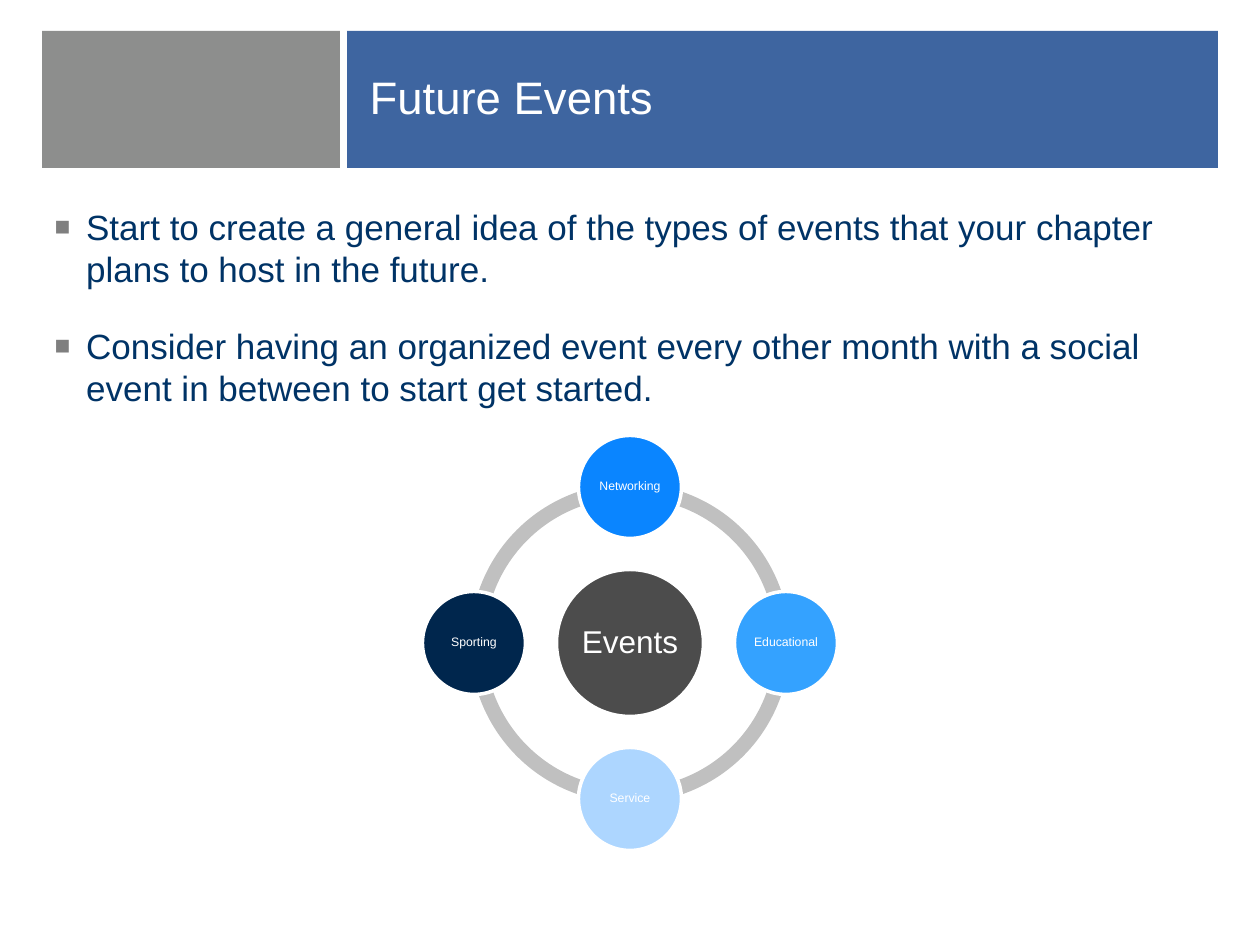
import math
from lxml import etree
from pptx import Presentation
from pptx.dml.color import RGBColor
from pptx.enum.shapes import MSO_SHAPE
from pptx.enum.text import MSO_ANCHOR, MSO_AUTO_SIZE, PP_ALIGN
from pptx.oxml.ns import qn
from pptx.util import Pt

RECTANGLE, OVAL, BLOCK_ARC = MSO_SHAPE.RECTANGLE, MSO_SHAPE.OVAL, MSO_SHAPE.BLOCK_ARC
MIDDLE = MSO_ANCHOR.MIDDLE
NO_AUTOFIT = MSO_AUTO_SIZE.NONE
LEFT, CENTER = PP_ALIGN.LEFT, PP_ALIGN.CENTER
EMU_PER_PX = 914400 / 126


def px(length):
    return round(length * EMU_PER_PX)


def color(hex_code):
    return RGBColor.from_string(hex_code)


class EventSlide:
    font_name = "Arial"
    white = "FFFFFF"
    navy = "003366"
    bullet_gray = "7F7F7F"
    ring_gray = "C0C0C0"

    def __init__(self, deck):
        self.slide = deck.slides.add_slide(deck.slide_layouts[1])
        self.heading = self.slide.shapes.title
        self.body = self.slide.placeholders[1]

    def set_font(self, paragraph, size, hex_code):
        paragraph.font.name = self.font_name
        paragraph.font.size = Pt(size)
        paragraph.font.color.rgb = color(hex_code)

    def place(self, placeholder, left, top, width, height):
        placeholder.left, placeholder.top = px(left), px(top)
        placeholder.width, placeholder.height = px(width), px(height)
        placeholder.text_frame.auto_size = NO_AUTOFIT

    def figure(self, preset, left, top, width, height, fill):
        shape = self.slide.shapes.add_shape(preset, px(left), px(top), px(width), px(height))
        shape.shadow.inherit = False
        shape.fill.solid()
        shape.fill.fore_color.rgb = color(fill)
        shape.line.fill.background()
        return shape

    def band(self, left, width, fill):
        block = self.figure(RECTANGLE, left, 31, width, 137, fill)
        self.heading.element.addprevious(block.element)

    def title(self, wording):
        self.place(self.heading, 357, 35, 840, 122)
        frame = self.heading.text_frame
        frame.vertical_anchor = MIDDLE
        frame.text = wording
        frame.paragraphs[0].alignment = LEFT
        self.set_font(frame.paragraphs[0], 26, self.white)

    def bullets(self, points):
        self.place(self.body, 42, 199, 1176, 693)
        frame = self.body.text_frame
        frame.text = "\n".join(points)
        for index, paragraph in enumerate(frame.paragraphs):
            paragraph.line_spacing = 1.0
            paragraph.space_before = Pt(20 if index else 0)
            self.mark(paragraph)
            self.set_font(paragraph, 20, self.navy)

    def mark(self, paragraph):
        properties = paragraph._p.get_or_add_pPr()
        properties.set("marL", "228600")
        properties.set("indent", "-228600")
        tint = etree.SubElement(properties, qn("a:buClr"))
        etree.SubElement(tint, qn("a:srgbClr"), val=self.bullet_gray)
        etree.SubElement(properties, qn("a:buSzPct"), val="75000")
        etree.SubElement(properties, qn("a:buFont"), typeface=self.font_name)
        etree.SubElement(properties, qn("a:buChar"), char="■")

    def ring(self, center_x, center_y, diameter):
        left, top = center_x - diameter / 2, center_y - diameter / 2
        for quarter in range(4):
            arc = self.figure(BLOCK_ARC, left, top, diameter, diameter, self.ring_gray)
            arc.adjustments[0] = quarter * 54
            arc.adjustments[1] = (quarter + 1) % 4 * 54
            arc.adjustments[2] = 0.046

    def circle(self, label, center_x, center_y, diameter, fill, size):
        disc = self.figure(OVAL, center_x - diameter / 2, center_y - diameter / 2,
                           diameter, diameter, fill)
        disc.line.color.rgb = color(self.white)
        disc.line.width = Pt(2)
        frame = disc.text_frame
        frame.word_wrap = False
        frame.vertical_anchor = MIDDLE
        frame.margin_left = frame.margin_right = px(1)
        frame.margin_top = frame.margin_bottom = px(1)
        frame.text = label
        paragraph = frame.paragraphs[0]
        paragraph.alignment = CENTER
        paragraph.line_spacing = 0.9
        self.set_font(paragraph, size, self.white)


def main():
    deck = Presentation()
    deck.slide_width, deck.slide_height = px(1260), px(945)
    page = EventSlide(deck)

    page.band(347, 871, "3E65A0")
    page.band(340, 7, "FFFFFE")
    page.band(42, 298, "8D8E8D")
    page.title("Future Events")
    page.bullets([
        "Start to create a general idea of the types of events that your chapter "
        "plans to host in the future.",
        "Consider having an organized event every other month with a social event "
        "in between to start get started.",
    ])

    hub_x, hub_y, orbit = 630, 643, 156
    page.ring(hub_x, hub_y, 320)
    page.circle("Events", hub_x, hub_y, 147, "4C4C4C", 18)
    event_types = [
        ("Networking", "0A85FF"),
        ("Educational", "34A2FF"),
        ("Service", "ADD6FF"),
        ("Sporting", "00264D"),
    ]
    for position, (event_type, fill) in enumerate(event_types):
        angle = math.tau * position / len(event_types)
        page.circle(event_type, hub_x + orbit * math.sin(angle),
                    hub_y - orbit * math.cos(angle), 103, fill, 7)

    deck.save("out.pptx")


if __name__ == "__main__":
    main()
